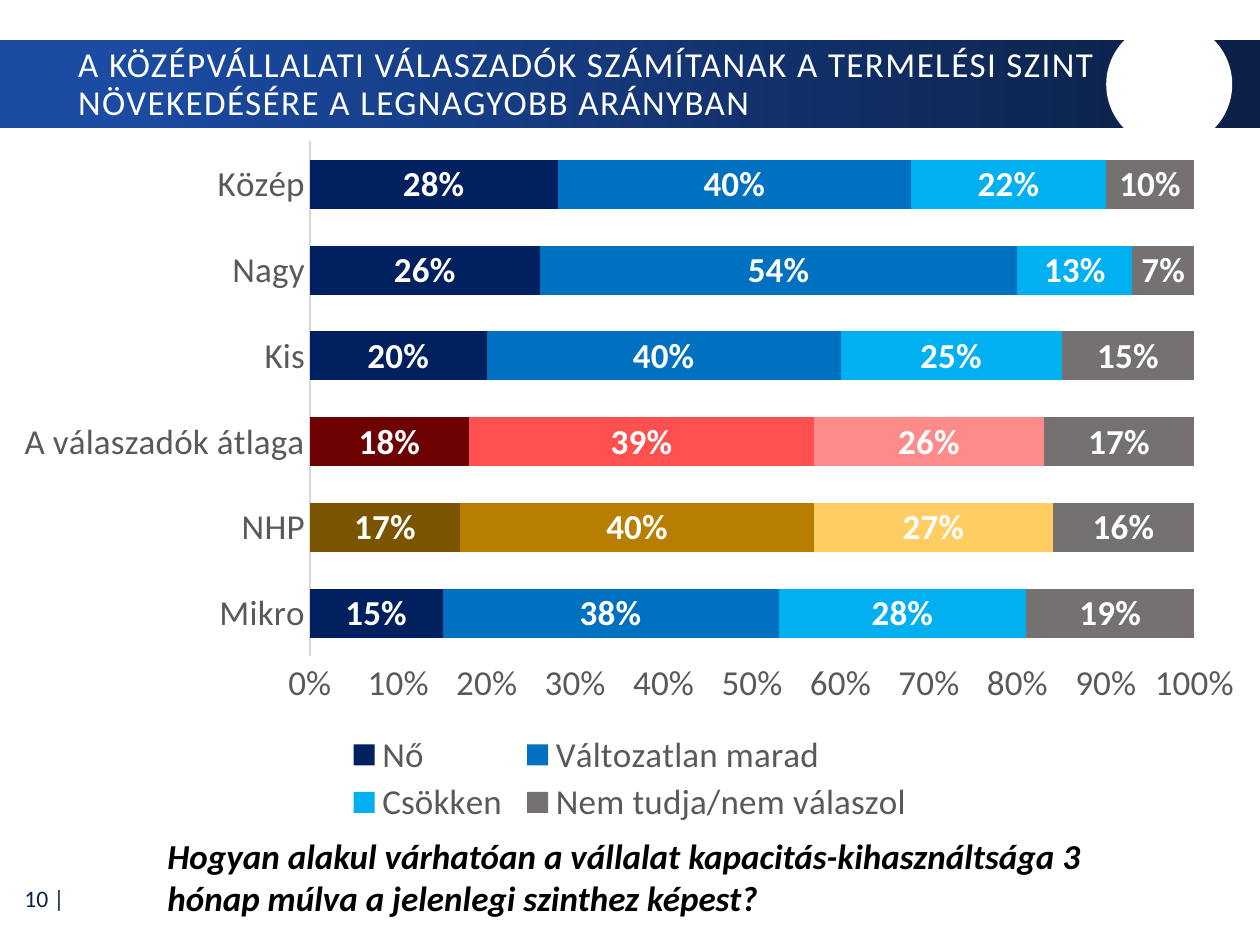
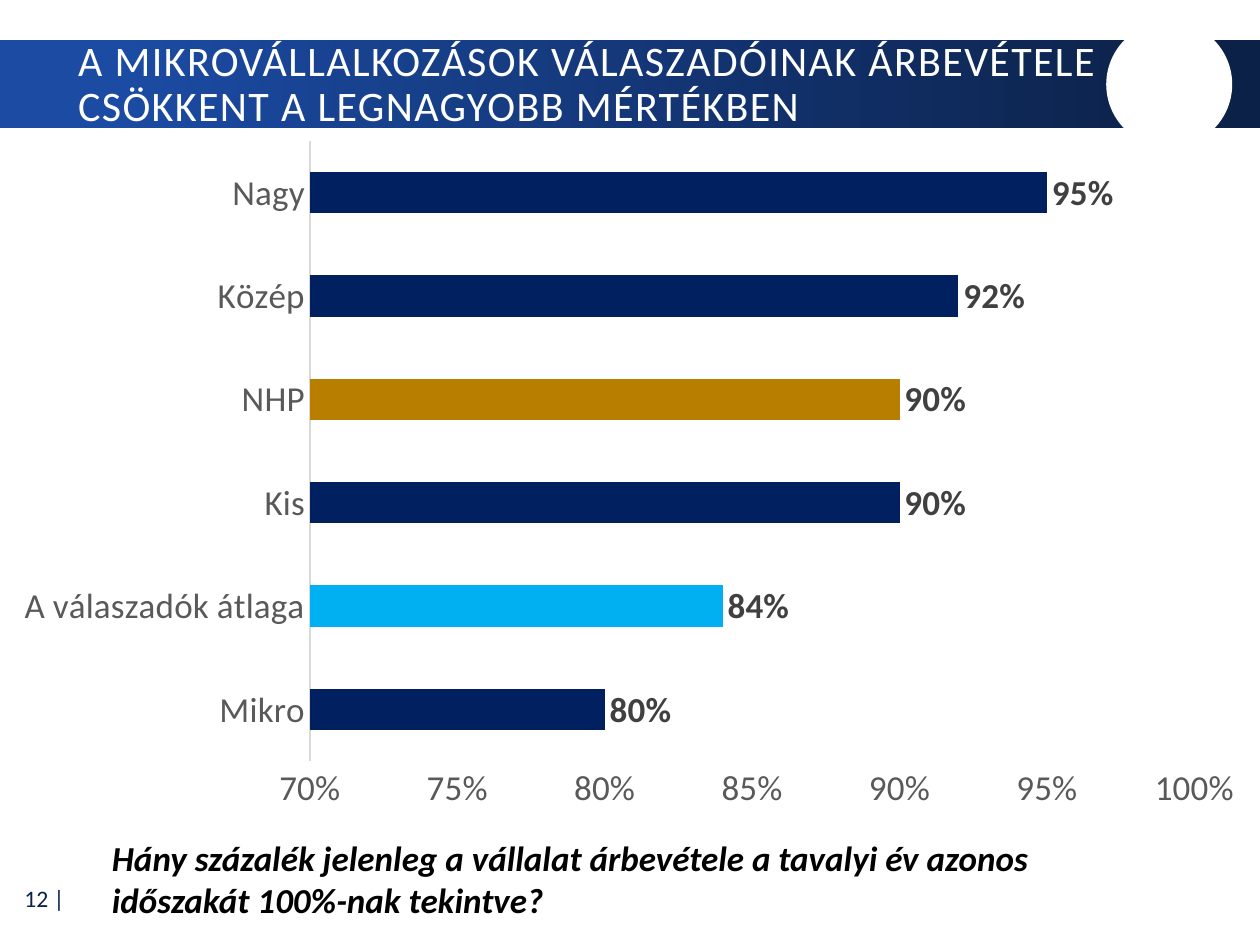
from lxml.etree import SubElement
from pptx import Presentation
from pptx.chart.data import CategoryChartData
from pptx.dml.color import RGBColor
from pptx.enum.chart import XL_CHART_TYPE, XL_LABEL_POSITION, XL_LEGEND_POSITION, XL_TICK_MARK
from pptx.enum.shapes import MSO_SHAPE
from pptx.enum.text import MSO_ANCHOR, MSO_AUTO_SIZE, PP_ALIGN
from pptx.oxml.ns import qn
from pptx.util import Pt

PX = 9144
FONT = "Calibri"
WHITE, BLACK, NAVY, BLUE = "FFFFFF", "000000", "0C2148", "1B4BA3"
DEEP, MID, SKY, GREY, AMBER = "002060", "0070C0", "00B0F0", "767171", "B87E00"
AXIS_TEXT, AXIS_LINE, LABEL_DARK = "595959", "D9D9D9", "404040"


def color(value):
    return RGBColor.from_string(value)


def box(left, top, width, height):
    return [length * PX for length in (left, top, width, height)]


def style_font(font, size, tone, bold=False, italic=False):
    font.name, font.size, font.bold, font.italic = FONT, Pt(size), bold, italic
    font.color.rgb = color(tone)


def write_text(frame, text, size=20, tone=BLACK, bold=False, italic=False, align=PP_ALIGN.LEFT,
               anchor=MSO_ANCHOR.TOP, line_spacing=None, tracking=None, fit=MSO_AUTO_SIZE.NONE):
    frame.word_wrap = True
    frame.auto_size = fit
    frame.vertical_anchor = anchor
    paragraph = frame.paragraphs[0]
    paragraph.alignment = align
    paragraph.line_spacing = line_spacing
    run = paragraph.add_run()
    run.text = text
    style_font(run.font, size, tone, bold, italic)
    if tracking:
        run.font._element.set("spc", str(tracking))


def place(element, left, top, width, height):
    for old in element.findall(qn("c:layout")):
        element.remove(old)
    layout = SubElement(element, qn("c:layout"))
    manual = SubElement(layout, qn("c:manualLayout"))
    settings = {"xMode": "edge", "yMode": "edge", "x": left, "y": top, "w": width, "h": height}
    if element.tag == qn("c:plotArea"):
        settings = {"layoutTarget": "inner", **settings}
        element.insert(0, layout)
    else:
        element.find(qn("c:legendPos")).addnext(layout)
    for name, value in settings.items():
        SubElement(manual, qn(f"c:{name}")).set("val", str(value))


class SurveyDeck:
    def __init__(self):
        self.deck = Presentation()
        self.deck.slide_width, self.deck.slide_height = 1000 * PX, 750 * PX
        self.slide = None

    def start(self, title, title_size, page):
        self.slide = self.deck.slides.add_slide(self.deck.slide_layouts[5])
        self.text(f"{page} |", (1, 694, 60, 37), size=13.5, tone=NAVY,
                  align=PP_ALIGN.RIGHT, anchor=MSO_ANCHOR.MIDDLE)
        self.band()
        self.title(title, title_size)

    def shape(self, preset, area):
        shape = self.slide.shapes.add_shape(preset, *box(*area))
        shape.shadow.inherit = False
        shape.line.fill.background()
        return shape

    def band(self):
        fill = self.shape(MSO_SHAPE.RECTANGLE, (0, 32, 1000, 70)).fill
        fill.gradient()
        fill.gradient_angle = 0
        for stop, position, tone in zip(fill.gradient_stops, (0.09, 0.95), (BLUE, NAVY)):
            stop.position, stop.color.rgb = position, color(tone)
        emblem = self.shape(MSO_SHAPE.OVAL, (878, 17, 100, 100))
        emblem.fill.solid()
        emblem.fill.fore_color.rgb = color(WHITE)

    def title(self, text, size):
        heading = self.slide.shapes.title
        heading.left, heading.top, heading.width, heading.height = box(52, 34, 832, 67)
        write_text(heading.text_frame, text, size=size, tone=WHITE, anchor=MSO_ANCHOR.MIDDLE,
                   line_spacing=0.9, tracking=80)
        self.slide.shapes._spTree.append(heading._element)

    def text(self, text, area, **style):
        frame = self.slide.shapes.add_textbox(*box(*area)).text_frame
        write_text(frame, text, **style)

    def question(self, text, area):
        self.text(text, area, bold=True, italic=True, fit=MSO_AUTO_SIZE.SHAPE_TO_FIT_TEXT)

    def bars(self, kind, height, categories, answers, gap, overlap, scale, plot_height,
             label_tone, label_position):
        data = CategoryChartData(number_format="0%")
        data.categories = categories
        for name, values, _, _ in answers:
            data.add_series(name, values)
        chart = self.slide.shapes.add_chart(kind, *box(0, 101, 1000, height), data).chart
        chart.has_title = chart.has_legend = False
        style_font(chart.font, 20, BLACK)
        self.axes(chart, scale)
        place(chart._chartSpace.chart.plotArea, 0.246, 0.02, 0.702, plot_height)

        plot = chart.plots[0]
        plot.gap_width, plot.overlap, plot.vary_by_categories = gap, overlap, False
        for series, (_, _, tone, accents) in zip(plot.series, answers):
            series.invert_if_negative = False
            self.paint(series, tone)
            for index, accent in accents.items():
                self.paint(series.points[index], accent)
            labels = series.data_labels
            labels.show_value = True
            labels.number_format, labels.number_format_is_linked = "0%", False
            labels.position = label_position
            style_font(labels.font, 20, label_tone, bold=True)
        return chart

    def paint(self, bar, tone):
        bar.format.fill.solid()
        bar.format.fill.fore_color.rgb = color(tone)

    def axes(self, chart, scale):
        for axis in (chart.category_axis, chart.value_axis):
            axis.has_major_gridlines = False
            axis.major_tick_mark = axis.minor_tick_mark = XL_TICK_MARK.NONE
            style_font(axis.tick_labels.font, 20, AXIS_TEXT)
        chart.category_axis.format.line.color.rgb = color(AXIS_LINE)
        chart.category_axis.format.line.width = Pt(0.75)
        percent = chart.value_axis
        percent.format.line.fill.background()
        percent.minimum_scale, percent.maximum_scale, percent.major_unit = scale
        percent.tick_labels.number_format = "0%"
        percent.tick_labels.number_format_is_linked = False

    def legend(self, chart):
        chart.has_legend = True
        chart.legend.position = XL_LEGEND_POSITION.BOTTOM
        chart.legend.include_in_layout = False
        style_font(chart.legend.font, 20, AXIS_TEXT)
        place(chart.legend._element, 0.27, 0.85, 0.46, 0.14)


def main():
    survey = SurveyDeck()

    survey.start("A KÖZÉPVÁLLALATI VÁLASZADÓK SZÁMÍTANAK A TERMELÉSI SZINT "
                 "NÖVEKEDÉSÉRE A LEGNAGYOBB ARÁNYBAN", 20, 10)
    capacity = survey.bars(
        XL_CHART_TYPE.BAR_STACKED_100, 562,
        ["Mikro", "NHP", "A válaszadók átlaga", "Kis", "Nagy", "Közép"],
        [("Nő", (0.15, 0.17, 0.18, 0.2, 0.26, 0.28), DEEP, {1: "7B5400", 2: "6D0000"}),
         ("Változatlan marad", (0.38, 0.4, 0.39, 0.4, 0.54, 0.4), MID, {1: AMBER, 2: "FF5050"}),
         ("Csökken", (0.28, 0.27, 0.26, 0.25, 0.13, 0.22), SKY, {1: "FFCD61", 2: "FF8A8A"}),
         ("Nem tudja/nem válaszol", (0.19, 0.16, 0.17, 0.15, 0.07, 0.1), GREY, {})],
        gap=75, overlap=100, scale=(0, 1, 0.1), plot_height=0.727,
        label_tone=WHITE, label_position=XL_LABEL_POSITION.CENTER)
    survey.legend(capacity)
    survey.question("Hogyan alakul várhatóan a vállalat kapacitás-kihasználtsága 3 hónap múlva "
                    "a jelenlegi szinthez képest?", (123, 657, 753, 77))

    survey.start("A MIKROVÁLLALKOZÁSOK VÁLASZADÓINAK ÁRBEVÉTELE "
                 "CSÖKKENT A LEGNAGYOBB MÉRTÉKBEN", 24, 12)
    survey.question("Hány százalék jelenleg a vállalat árbevétele a tavalyi év azonos időszakát "
                    "100%-nak tekintve?", (79, 659, 806, 77))
    survey.bars(
        XL_CHART_TYPE.BAR_CLUSTERED, 553,
        ["Mikro", "A válaszadók átlaga", "Kis", "NHP", "Közép", "Nagy"],
        [("Series 1", (0.8, 0.84, 0.9, 0.9, 0.92, 0.95), DEEP, {1: SKY, 3: AMBER})],
        gap=150, overlap=-50, scale=(0.7, 1, 0.05), plot_height=0.89,
        label_tone=LABEL_DARK, label_position=XL_LABEL_POSITION.OUTSIDE_END)

    survey.deck.save("out.pptx")


if __name__ == "__main__":
    main()
